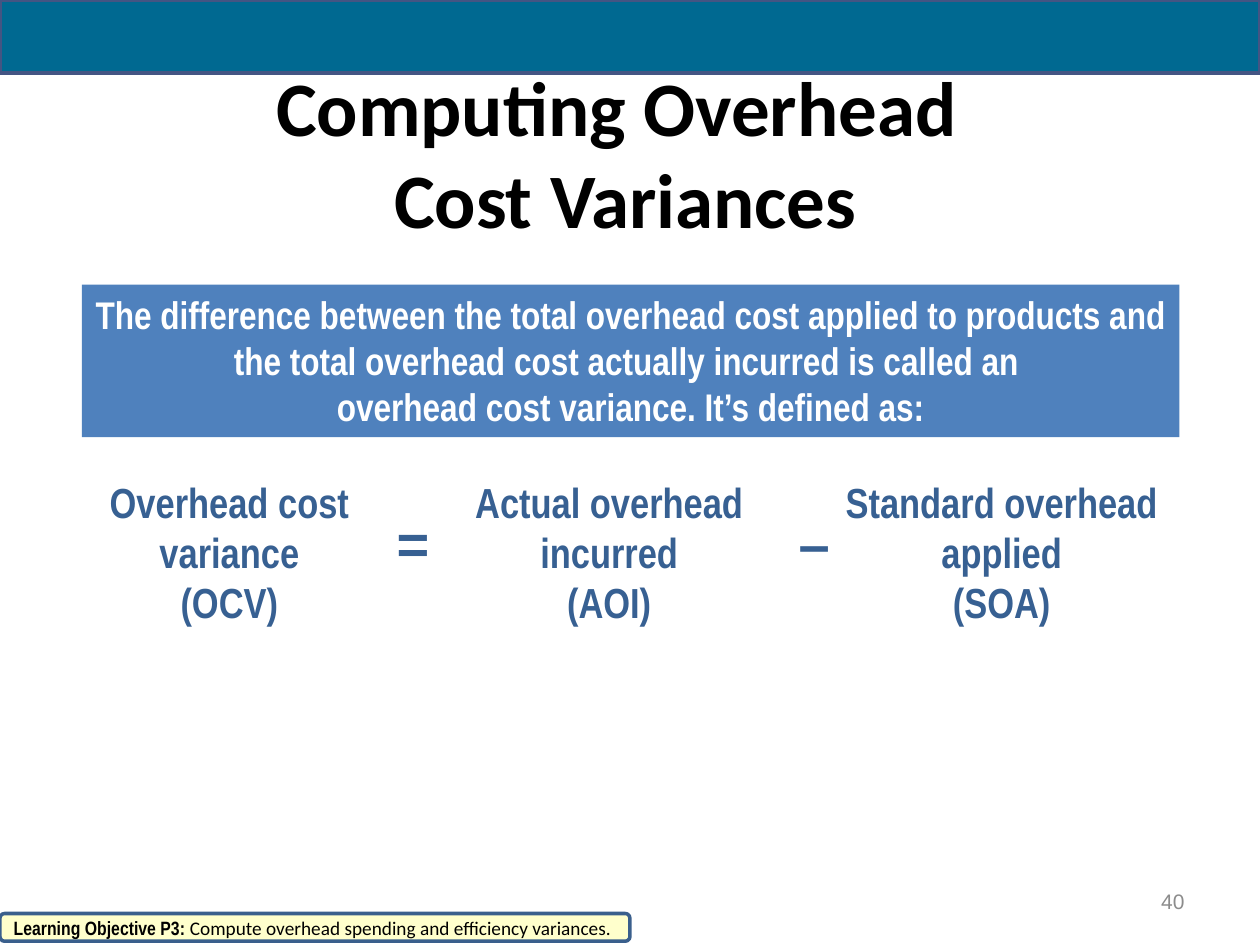
from pptx import Presentation
from pptx.dml.color import RGBColor
from pptx.enum.shapes import MSO_SHAPE as Shape
from pptx.enum.text import MSO_ANCHOR as Anchor, MSO_AUTO_SIZE as Fit, PP_ALIGN as Align
from pptx.util import Inches, Pt


def write(par, text, size, font, color, bold=True):
    """Add text to a paragraph, one run per line, with line breaks between."""
    for i, line in enumerate(text.split("\n")):
        if i:
            par.add_line_break()
        run = par.add_run()
        run.text = line
        run.font.size = Pt(size)
        run.font.name = font
        run.font.bold = bold
        run.font.color.rgb = RGBColor.from_string(color)


def block(kind, left, top, width, height, fill, line=None, weight=0):
    """Add a filled shape, outlined only when a line colour is given."""
    shape = slide.shapes.add_shape(
        kind, Inches(left), Inches(top), Inches(width), Inches(height))
    shape.shadow.inherit = False
    shape.fill.solid()
    shape.fill.fore_color.rgb = RGBColor.from_string(fill)
    if line:
        shape.line.color.rgb = RGBColor.from_string(line)
        shape.line.width = Pt(weight)
    else:
        shape.line.fill.background()
    shape.text_frame.word_wrap = True
    return shape


deck = Presentation()
deck.slide_width, deck.slide_height = Inches(10), Inches(7.5)
slide = deck.slides.add_slide(deck.slide_layouts[5])

# Top band and title
block(Shape.RECTANGLE, 0, 0, 10, 0.58, "006991", "445583", 2.25)
title = slide.shapes.title
title.left, title.top = Inches(0.3), Inches(0.58)
title.width, title.height = Inches(9.33), Inches(1.25)
frame = title.text_frame
frame.auto_size = Fit.NONE
frame.vertical_anchor = Anchor.MIDDLE
par = frame.paragraphs[0]
par.alignment = Align.CENTER
write(par, "Computing Overhead \nCost Variances", 44, "Calibri", "000000")

# Equation: terms on one row, signs on another
group = slide.shapes.add_group_shape()
terms = [
    (0.76, 2.12, ["Overhead cost", "variance", "(OCV)"]),
    (3.66, 2.35, ["Actual overhead", "incurred", "(AOI)"]),
    (6.6, 2.7, ["Standard overhead", "applied", "(SOA)"]),
]
signs = [(3.05, 0.46, ["="]), (6.24, 0.45, ["–"])]
rows = [
    (terms, 3.73, 1.31, 24, "Arial Narrow", Align.CENTER),
    (signs, 3.99, 0.64, 32, "Arial", Align.LEFT),
]
for items, top, height, size, font, align in rows:
    for left, width, lines in items:
        box = group.shapes.add_textbox(
            Inches(left), Inches(top), Inches(width), Inches(height))
        frame = box.text_frame
        frame.word_wrap = False
        frame.auto_size = Fit.SHAPE_TO_FIT_TEXT
        for i, line in enumerate(lines):
            par = frame.add_paragraph() if i else frame.paragraphs[0]
            par.alignment = align
            write(par, line, size, font, "376092")

# Slide number
box = slide.shapes.add_textbox(Inches(7.17), Inches(6.95), Inches(2.33), Inches(0.4))
frame = box.text_frame
frame.word_wrap = True
frame.vertical_anchor = Anchor.MIDDLE
par = frame.paragraphs[0]
par.alignment = Align.RIGHT
write(par, "40", 12, "Arial", "8C8C8C", False)

# Definition
frame = block(Shape.RECTANGLE, 0.65, 2.26, 8.71, 1.21, "4F81BD").text_frame
frame.auto_size = Fit.SHAPE_TO_FIT_TEXT
frame.vertical_anchor = Anchor.TOP
par = frame.paragraphs[0]
par.alignment = Align.CENTER
write(par, "The difference between the total overhead cost applied to products and "
      "the total overhead cost actually incurred is called an \n"
      "overhead cost variance. It’s defined as:", 22, "Arial Narrow", "FFFFFF")

# Learning objective
frame = block(Shape.ROUNDED_RECTANGLE, 0, 7.25, 5, 0.22,
              "FFFFCC", "3A5F8C", 2).text_frame
frame.vertical_anchor = Anchor.MIDDLE
par = frame.paragraphs[0]
par.alignment = Align.LEFT
write(par, "Learning Objective P3: ", 11, "Arial Narrow", "000000")
write(par, "Compute overhead spending and efficiency variances.",
      11, "Calibri", "000000", False)

deck.save("out.pptx")
